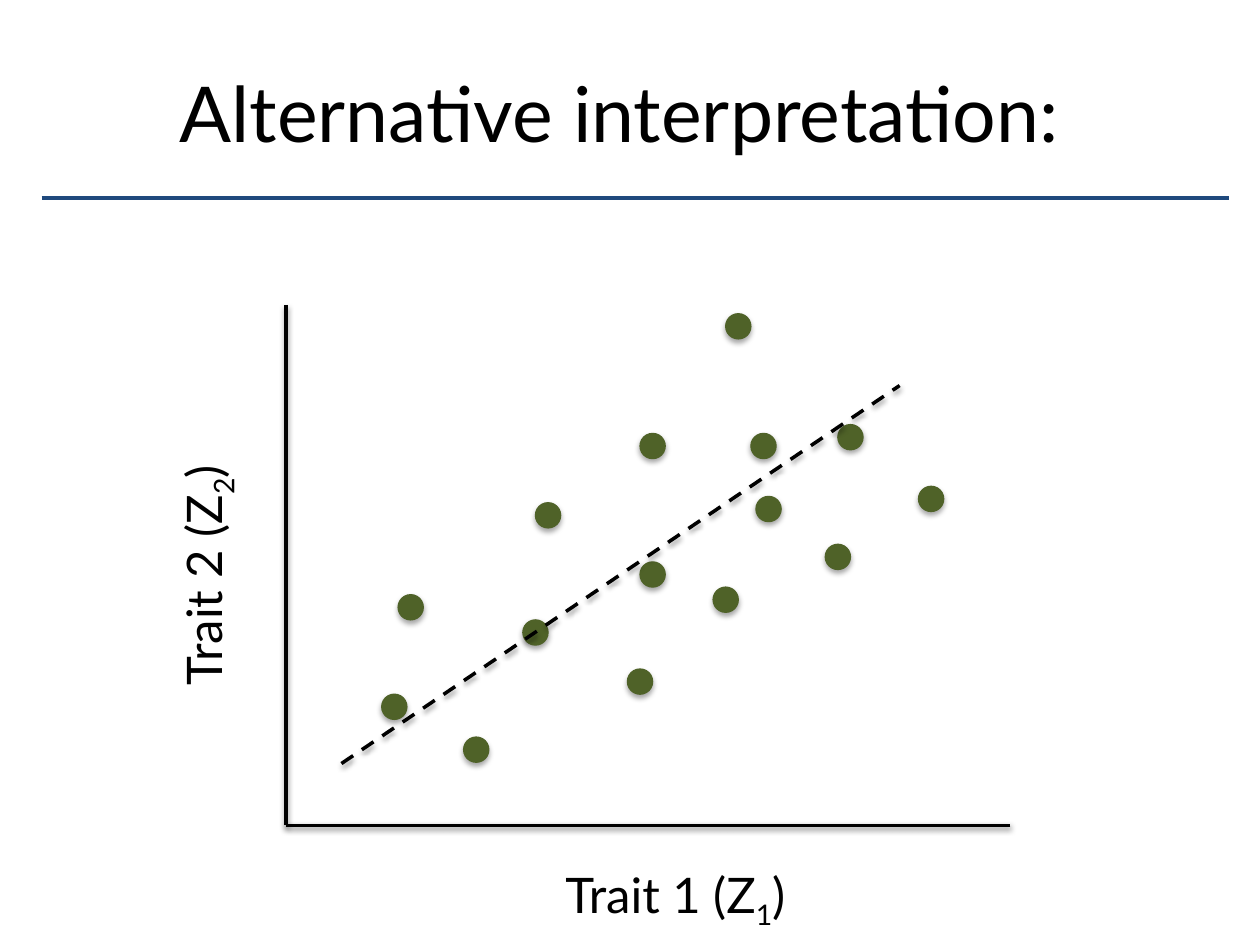
from lxml.etree import SubElement as Sub
from pptx import Presentation
from pptx.dml.color import RGBColor
from pptx.enum.dml import MSO_LINE as Dash
from pptx.enum.shapes import MSO_CONNECTOR as Conn, MSO_SHAPE as Shape
from pptx.enum.text import MSO_ANCHOR as Anchor, MSO_AUTO_SIZE as Fit, PP_ALIGN as Align
from pptx.oxml.ns import qn
from pptx.util import Inches, Pt

TITLE = "Alternative interpretation: "
FONT, BLACK, BLUE, GREEN = "Lato", "000000", "1F497D", "4F6228"
RULE = (0.33, 1.57, 9.75, 1.57)
AXES = [(2.27, 2.42, 2.27, 6.55), (8.02, 6.55, 2.27, 6.55)]
TREND = (2.71, 6.06, 7.14, 3.06)
LABELS = [("Trait 1 (Z", "1", 4.08, 6.81, 0), ("Trait 2 (Z", "2", 0.33, 4.28, 270)]
DOT = 0.2
DOTS = [
    (5.96, 3.44), (6.00, 3.94), (5.76, 2.49), (6.65, 3.37), (6.55, 4.32),
    (7.29, 3.86), (3.68, 5.85), (5.66, 4.66), (4.25, 3.99), (4.15, 4.92),
    (3.03, 5.51), (3.16, 4.72), (5.08, 4.46), (5.08, 3.44), (4.98, 5.31),
]


def paint(item, color):
    item.rgb = RGBColor.from_string(color)


def style(run, size):
    run.font.name, run.font.size = FONT, Pt(size)
    paint(run.font.color, BLACK)


def shade(shape, alpha=0, dist=0):
    props = shape._element.spPr
    for old in props.findall(qn("a:effectLst")):
        props.remove(old)
    effects = Sub(props, qn("a:effectLst"))
    if alpha:
        cast = Sub(effects, qn("a:outerShdw"), blurRad=str(Pt(3.1)), dist=str(Pt(dist)),
                   dir="5400000", rotWithShape="0")
        tint = Sub(cast, qn("a:srgbClr"), val=BLACK)
        Sub(tint, qn("a:alpha"), val=str(alpha * 1000))


def draw_line(slide, ends, color, alpha=0, dash=None):
    line = slide.shapes.add_connector(Conn.STRAIGHT, *map(Inches, ends))
    paint(line.line.color, color)
    line.line.width = Pt(2)
    if dash:
        line.line.dash_style = dash
    shade(line, alpha, 1.6)


def draw_label(slide, stem, sub, left, top, turn):
    box = slide.shapes.add_textbox(*map(Inches, (left, top, 2.56, 0.57)))
    box.rotation = turn
    frame = box.text_frame
    frame.word_wrap, frame.auto_size = True, Fit.SHAPE_TO_FIT_TEXT
    para = frame.paragraphs[0]
    para.alignment = Align.CENTER
    for part in (stem, sub, ")"):
        run = para.add_run()
        run.text = part
        style(run, 28)
        if part == sub:
            run.font._element.set("baseline", "-25000")


def draw_dot(slide, left, top):
    dot = slide.shapes.add_shape(Shape.OVAL, *map(Inches, (left, top, DOT, DOT)))
    dot.fill.solid()
    paint(dot.fill.fore_color, GREEN)
    paint(dot.line.color, GREEN)
    dot.line.width = Pt(0.75)
    shade(dot, 35, 1.8)


def draw_title(slide):
    title = slide.shapes.title
    title.left, title.top, title.width, title.height = map(Inches, (-0.17, 0.47, 10.33, 1.83))
    frame = title.text_frame
    frame.text = TITLE
    frame.auto_size, frame.vertical_anchor = Fit.NONE, Anchor.TOP
    frame.paragraphs[0].alignment = Align.CENTER
    style(frame.paragraphs[0].runs[0], 44)


def main():
    """Build the trait scatter slide."""
    deck = Presentation()
    deck.slide_width, deck.slide_height = Inches(10), Inches(7.5)
    slide = deck.slides.add_slide(deck.slide_layouts[5])
    draw_title(slide)
    draw_line(slide, RULE, BLUE)
    for axis in AXES:
        draw_line(slide, axis, BLACK, 38)
    for label in LABELS:
        draw_label(slide, *label)
    for spot in DOTS:
        draw_dot(slide, *spot)
    draw_line(slide, TREND, BLACK, 38, Dash.DASH)
    deck.save("out.pptx")


if __name__ == "__main__":
    main()
